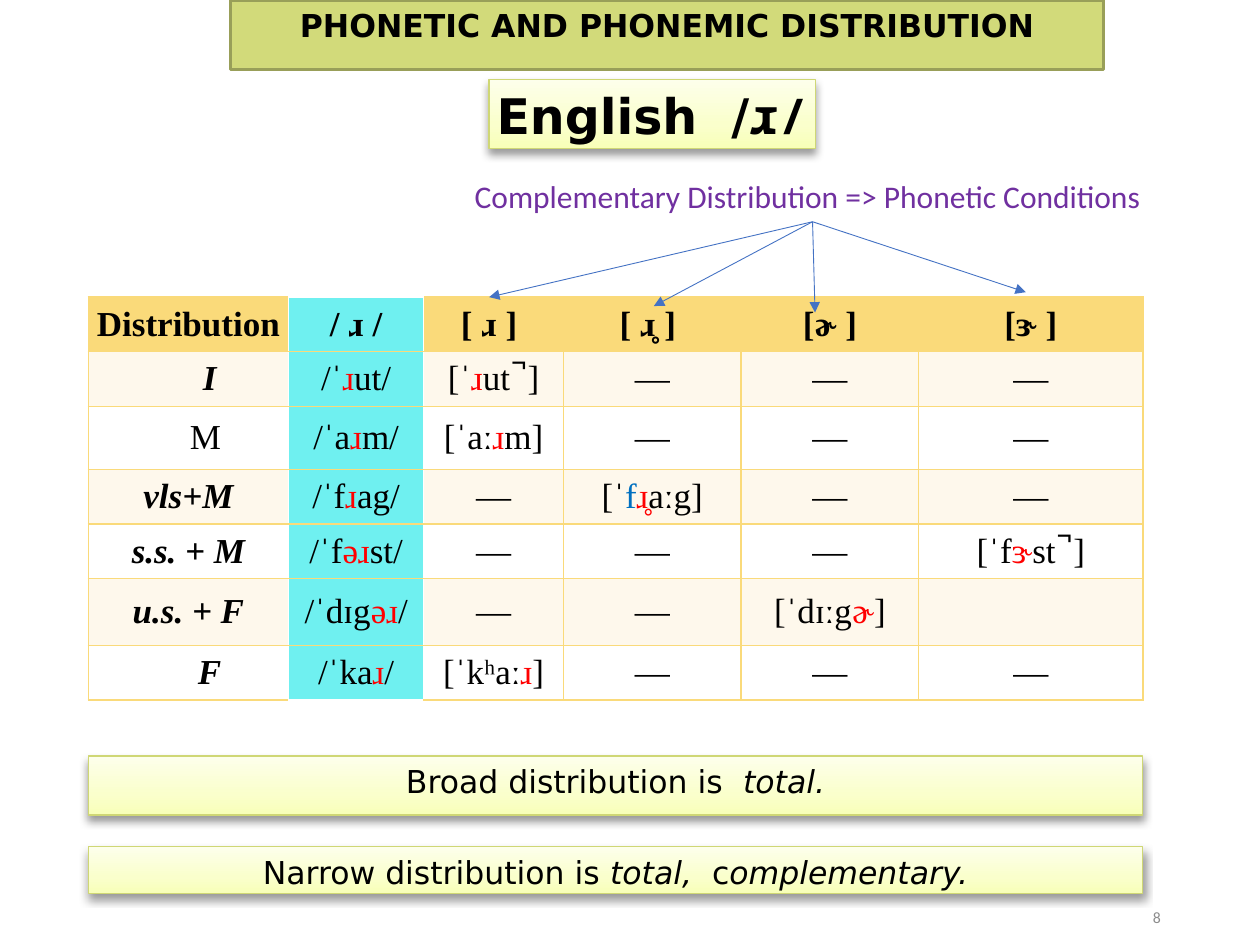
from copy import deepcopy
from dataclasses import dataclass

from lxml import etree
from pptx import Presentation
from pptx import util as u
from pptx.dml.color import RGBColor
from pptx.enum import shapes, text
from pptx.oxml.ns import qn


@dataclass(frozen=True)
class Theme:
    ink: str = "000000"
    red: str = "FF0000"
    blue: str = "0070C0"
    purple: str = "7030A0"
    gray: str = "8C8C8C"
    white: str = "FFFFFF"
    arrow: str = "4472C4"
    gold: str = "FADA7A"
    cream: str = "FEF8EC"
    cyan: str = "6FF0F0"
    olive: str = "D2DA7A"
    olive_edge: str = "999F59"
    lime_edge: str = "CFD775"
    lime: tuple = ((0, "F8FFB8"), (0.35, "FAFFCC"), (1, "FDFFEB"))
    sans: str = "DejaVu Sans"
    mono: str = "Noto Sans Mono"
    serif: str = "Times New Roman"
    plain: str = "Calibri"
    body: int = 18
    table: int = 20
    symbol: int = 28
    number: int = 9


THEME = Theme()


@dataclass(frozen=True)
class Span:
    text: str
    color: str = THEME.ink
    font: str = THEME.sans
    size: int = THEME.body
    bold: bool = False
    italic: bool = False


@dataclass(frozen=True)
class Area:
    left: float
    top: float
    width: float
    height: float

    def lengths(self) -> list:
        return [u.Cm(v) for v in (self.left, self.top, self.width, self.height)]


@dataclass(frozen=True)
class Panel:
    area: Area
    spans: tuple
    edge: str = THEME.lime_edge
    weight: float = 0.75
    glossy: bool = True


@dataclass(frozen=True)
class Row:
    label: str
    height: float
    cells: tuple
    indent: float = 0
    strong: bool = True


def rgb(color: str) -> RGBColor:
    return RGBColor.from_string(color)


def red(value: str) -> Span:
    return Span(value, THEME.red)


def write(para, spans: tuple, align) -> None:
    para.alignment = align
    for span in spans:
        run = para.add_run()
        run.text = span.text
        font = run.font
        font.name, font.size = span.font, u.Pt(span.size)
        font.bold, font.italic = span.bold, span.italic
        font.color.rgb = rgb(span.color)


def set_insets(holder) -> None:
    holder.margin_left = holder.margin_right = u.Cm(0.13)
    holder.margin_top = holder.margin_bottom = u.Cm(0.13)


def add_gloss(box) -> None:
    box.fill.gradient()
    box.fill.gradient_angle = 90
    properties = box.element.spPr
    stops = properties.find(".//" + qn("a:gsLst"))
    stops.insert(1, deepcopy(stops[0]))
    for stop, (position, color) in zip(box.fill.gradient_stops, THEME.lime):
        stop.position, stop.color.rgb = position, rgb(color)
    effects = properties.find(qn("a:effectLst"))
    shadow = etree.SubElement(effects, qn("a:outerShdw"), blurRad=str(u.Pt(5)),
                              dist=str(u.Pt(3)), dir="5400000", rotWithShape="0")
    tint = etree.SubElement(shadow, qn("a:srgbClr"), val=THEME.ink)
    etree.SubElement(tint, qn("a:alpha"), val="40000")


def add_panel(page, panel: Panel) -> None:
    box = page.shapes.add_shape(shapes.MSO_SHAPE.RECTANGLE, *panel.area.lengths())
    box.line.color.rgb = rgb(panel.edge)
    box.line.width = u.Pt(panel.weight)
    box.shadow.inherit = False
    if panel.glossy:
        add_gloss(box)
    else:
        box.fill.solid()
        box.fill.fore_color.rgb = rgb(THEME.olive)
    frame = box.text_frame
    frame.word_wrap = True
    frame.vertical_anchor = text.MSO_ANCHOR.TOP
    set_insets(frame)
    para = frame.paragraphs[0]
    para.space_before = u.Pt(10)
    write(para, panel.spans, text.PP_ALIGN.CENTER)


def add_label(page, area: Area, span: Span, align, anchor, wrap: bool) -> None:
    frame = page.shapes.add_textbox(*area.lengths()).text_frame
    frame.word_wrap = wrap
    frame.vertical_anchor = anchor
    write(frame.paragraphs[0], (span,), align)


def add_arrow(page, start: tuple, end: tuple) -> None:
    arrow = page.shapes.add_connector(
        shapes.MSO_CONNECTOR.STRAIGHT, *(u.Cm(v) for v in start + end))
    arrow.line.color.rgb = rgb(THEME.arrow)
    arrow.line.width = u.Pt(0.5)
    etree.SubElement(arrow.line._get_or_add_ln(), qn("a:tailEnd"), type="triangle")
    etree.SubElement(arrow.element.spPr, qn("a:effectLst"))


def set_borders(cell, white_sides: str) -> None:
    properties = cell._tc.get_or_add_tcPr()
    for side in "LRTB":
        line = etree.SubElement(properties, qn(f"a:ln{side}"), w=str(u.Pt(1)))
        fill = etree.SubElement(line, qn("a:solidFill"))
        color = THEME.white if side in white_sides else THEME.gold
        etree.SubElement(fill, qn("a:srgbClr"), val=color)


def add_distribution(page, area: Area, widths: tuple, rows: tuple) -> None:
    table = page.shapes.add_table(len(rows), len(widths), *area.lengths()).table
    for column, width in zip(table.columns, widths):
        column.width = u.Cm(width)
    for r, row in enumerate(rows):
        table.rows[r].height = u.Cm(row.height)
        base = THEME.gold if r == 0 else THEME.cream if r % 2 else THEME.white
        for c, parts in enumerate(((row.label,),) + row.cells):
            cell = table.cell(r, c)
            sides = {0: "R", 1: "LR", 2: "L"}.get(c, "")
            if c == 1:
                sides += "T" if r == 0 else "B" if r == len(rows) - 1 else ""
            set_borders(cell, sides)
            cell.fill.solid()
            cell.fill.fore_color.rgb = rgb(THEME.cyan if c == 1 else base)
            cell.vertical_anchor = text.MSO_ANCHOR.MIDDLE
            set_insets(cell)
            if c == 0:
                cell.margin_left = u.Cm(0.13 + row.indent)
            label = c == 0 and row.strong
            plain = (p if isinstance(p, Span) else Span(p) for p in parts)
            spans = tuple(Span(p.text, p.color, THEME.serif, THEME.table,
                               r == 0 or label, r > 0 and label) for p in plain)
            write(cell.text_frame.paragraphs[0], spans, text.PP_ALIGN.CENTER)


DASH = ("—",)
ROWS = (
    Row("Distribution", 1.1, (("/ ɹ /",), ("[ ɹ ] ",), ("[ ɹ̥ ] ",), ("[ɚ ]",), ("[ɝ ]",))),
    Row("I", 1.1, (("/ˈ", red("ɹ"), "ut/"), ("[ˈ", red("ɹ"), "ut ̚ ]"),
                   DASH, DASH, DASH), 0.85),
    Row("M", 1.27, (("/ˈa", red("ɹ"), "m/"), ("[ˈaː", red("ɹ"), "m]"),
                    DASH, DASH, DASH), 0.68, False),
    Row("vls+M", 1.1, (("/ˈf", red("ɹ"), "ag/"), DASH,
                       ("[ˈ", Span("f", THEME.blue), red("ɹ̥"), "aːg]"), DASH, DASH)),
    Row("s.s. + M", 1.1, (("/ˈf", red("əɹ"), "st/"), DASH, DASH, DASH,
                          ("[ˈf", red("ɝ"), "st ̚ ]"))),
    Row("u.s. + F", 1.35, (("/ˈdɪg", red("əɹ"), "/"), DASH, DASH,
                           ("[ˈdɪːg", red("ɚ"), "]"), ())),
    Row("F", 1.1, (("/ˈka", red("ɹ"), "/"), ("[ˈkʰaː", red("ɹ"), "]"),
                   DASH, DASH, DASH), 0.85),
)
PANELS = (
    Panel(Area(4.65, 0, 17.6, 1.4),
          (Span("PHONETIC AND PHONEMIC DISTRIBUTION", bold=True),),
          THEME.olive_edge, 2, False),
    Panel(Area(9.86, 1.6, 6.58, 1.4),
          (Span("English  /", size=THEME.symbol, bold=True),
           Span("ɹ/ ", font=THEME.mono, size=THEME.symbol, bold=True))),
    Panel(Area(1.78, 15.24, 21.26, 1.19),
          (Span("Broad distribution is  "), Span("total.", italic=True))),
    Panel(Area(1.78, 17.07, 21.26, 0.94),
          (Span("Narrow distribution is "), Span("total, ", italic=True),
           Span(" c"), Span("omplementary.", italic=True))),
)
ARROW_START = (16.38, 4.47)
ARROW_ENDS = ((9.86, 5.99), (13.18, 6.17), (16.43, 6.3), (20.68, 5.89))


def main() -> None:
    deck = Presentation()
    deck.slide_width, deck.slide_height = u.Cm(25.4), u.Cm(19.05)
    page = deck.slides.add_slide(deck.slide_layouts[6])
    for panel in PANELS:
        add_panel(page, panel)
    add_distribution(page, Area(1.78, 5.99, 21.26, 8.12),
                     (4.04, 2.72, 2.82, 3.58, 3.58, 4.52), ROWS)
    add_label(page, Area(17.93, 17.98, 5.72, 1.02),
              Span("8", THEME.gray, THEME.plain, THEME.number),
              text.PP_ALIGN.RIGHT, text.MSO_ANCHOR.MIDDLE, True)
    add_label(page, Area(9.32, 3.45, 14.1, 1.02),
              Span("Complementary Distribution => Phonetic Conditions",
                   THEME.purple, THEME.plain),
              text.PP_ALIGN.LEFT, text.MSO_ANCHOR.TOP, False)
    for end in ARROW_ENDS:
        add_arrow(page, ARROW_START, end)
    deck.save("out.pptx")


if __name__ == "__main__":
    main()
